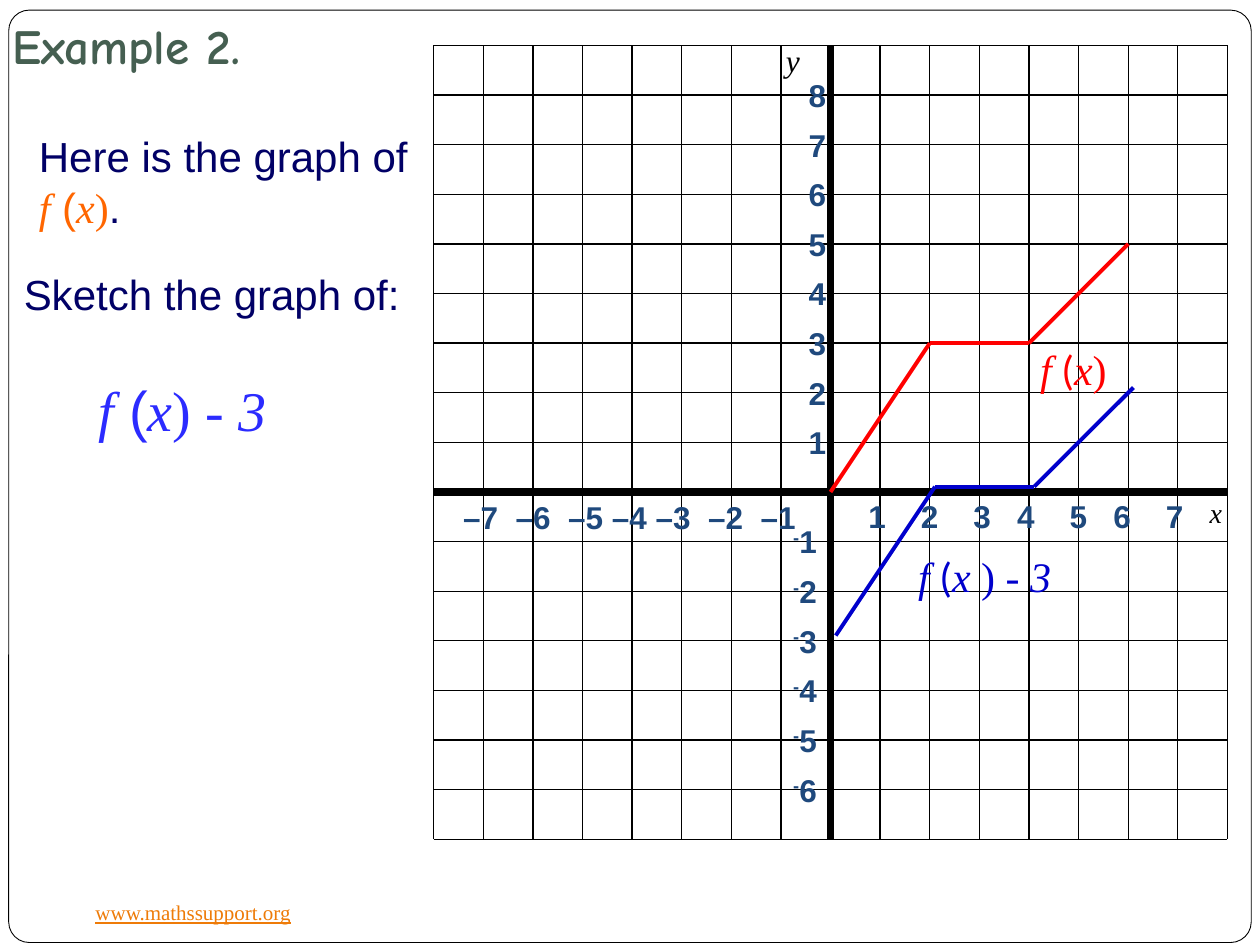
from itertools import pairwise

from lxml.etree import SubElement
from pptx import Presentation
from pptx.dml.color import RGBColor
from pptx.enum.shapes import MSO_CONNECTOR, MSO_SHAPE
from pptx.enum.text import MSO_ANCHOR, MSO_AUTO_SIZE
from pptx.oxml.ns import qn
from pptx.util import Pt

SERIF, SANS = "Times New Roman", "Arial"
BLACK, NAVY, LABEL, RED, BLUE = "000000", "010066", "1F497D", "FF0000", "0000CC"
STEP, CELLS = 28.35, 16


def rgb(value):
    """Turn a hex string into a colour."""
    return RGBColor.from_string(value)


def add_runs(p, runs, size):
    """Add (text, font, colour, italic) runs to a paragraph."""
    for text, font, color, italic in runs:
        r = p.add_run()
        r.text = text
        r.font.name = font
        r.font.size = Pt(size)
        r.font.color.rgb = rgb(color)
        r.font.italic = italic


def add_text(s, box, runs, size, wrap=True, bold=False):
    """Place a text box and return its paragraph."""
    tf = s.shapes.add_textbox(*map(Pt, box)).text_frame
    tf.word_wrap = wrap
    tf.auto_size = MSO_AUTO_SIZE.NONE if wrap else MSO_AUTO_SIZE.SHAPE_TO_FIT_TEXT
    p = tf.paragraphs[0]
    add_runs(p, runs, size)
    for r in p.runs:
        r.font.bold = bold
    return p


def add_line(s, start, end, color, width):
    """Draw a straight line without a shadow."""
    c = s.shapes.add_connector(MSO_CONNECTOR.STRAIGHT, *map(Pt, (*start, *end)))
    c.line.color.rgb = rgb(color)
    c.line.width = Pt(width)
    SubElement(c._element.spPr, qn("a:effectLst"))


def function_runs(color, paren_font, x="x", tail=""):
    """Return the runs of f (x) with an optional tail."""
    runs = [("f", SERIF, color, True), (" (", paren_font, color, False),
            (x, SERIF, color, True), (")", SERIF, color, False)]
    return runs + [(tail, SERIF, color, True)] if tail else runs


def add_frame(s, left, top, width, height):
    """Draw the rounded page border and the site address."""
    sp = s.shapes.add_shape(MSO_SHAPE.ROUNDED_RECTANGLE, *map(Pt, (left, top, width, height)))
    sp.adjustments[0] = 0.022
    sp.shadow.inherit = False
    sp.fill.solid()
    sp.fill.fore_color.rgb = rgb("FFFFFF")
    sp.line.color.rgb = rgb(BLACK)
    sp.line.width = Pt(0.5)
    site = [("www.mathssupport.org", SERIF, "EE7B08", False)]
    p = add_text(s, (left + 42.5, top + 504.7, 127.4, 21.8), site, 12, wrap=False)
    p.runs[0].font.underline = True


def add_task(s, left, top):
    """Write the title and the question."""
    title = [("Example 2.", "Comic Neue", "455F51", False)]
    p = add_text(s, (left, top, 186, 36.7), title, 28, bold=True)
    tf = s.shapes[-1].text_frame
    tf.vertical_anchor = MSO_ANCHOR.BOTTOM
    tf.margin_bottom = Pt(7.2)
    given = [("Here is the graph of ", SANS, NAVY, False),
             *function_runs("FF6600", SANS), (".", SANS, NAVY, False)]
    add_text(s, (left + 15.1, top + 58.3, 226, 65.5), given, 24)
    add_text(s, (left + 6.5, top + 136.8, 231, 36),
             [("Sketch the graph of:", SANS, NAVY, False)], 24, wrap=False)
    add_text(s, (left + 49, top + 198, 111.6, 46),
             function_runs("2B2BFF", SANS, tail=" - 3"), 32, wrap=False)


def add_tabbed_labels(s, box, labels, stops):
    """Write axis numbers centred on tab stops."""
    p = add_text(s, box, [], 18)
    tabs = SubElement(p._p.get_or_add_pPr(), qn("a:tabLst"))
    for stop in stops:
        SubElement(tabs, qn("a:tab"), pos=str(Pt(stop)), algn="ctr")
    add_runs(p, [("\t" + label, SANS, LABEL, False) for label in labels], 18)
    for r in p.runs:
        r.font.bold = True


def add_grid(s, left, top):
    """Draw the grid with its axes and numbers."""
    side = STEP * CELLS
    right, bottom = left + side, top + side
    x0, y0 = left + 8 * STEP, top + 9 * STEP
    for i in range(CELLS + 1):
        x, y = left + i * STEP, top + i * STEP
        add_line(s, (x, top), (x, bottom), BLACK, 0.75)
        add_line(s, (left, y), (right, y), BLACK, 0.75)
    add_line(s, (x0, top), (x0, bottom), BLACK, 4.5)
    add_line(s, (left, y0), (right, y0), BLACK, 4.5)
    add_text(s, (x0 - 32.6, top - 6, 38, 39.6), [("y", SERIF, BLACK, True)], 18)
    add_text(s, (right - 17.3, y0 - 1.8, 24, 23), [("x", SERIF, BLACK, True)], 16)
    add_tabbed_labels(s, (x0, y0 - 0.5, 232, 29), [str(n) for n in range(1, 8)],
                      (19.5, 49.5, 79.5, 104.5, 134.5, 159.5, 189.5))
    add_tabbed_labels(s, (x0 - 236.5, y0, 236, 29), [f"–{n}" for n in range(7, 0, -1)],
                      (29.5, 59.5, 89.5, 114.5, 139.5, 169.5, 199.5))
    for n in range(1, 9):
        add_text(s, (x0 - 19.6, y0 - 14.5 - n * STEP, 39, 29),
                 [(str(n), SANS, LABEL, False)], 18, bold=True)
    for n in range(1, 7):
        p = add_text(s, (x0 - 28.4, y0 - 14.5 + n * STEP, 41, 29),
                     [("-", SANS, LABEL, False), (str(n), SANS, LABEL, False)], 18, bold=True)
        p.runs[0].font._element.set("baseline", "30000")


def add_curve(s, x0, y0, color):
    """Draw the three-part curve from its starting point."""
    knots = [(x0 + x * STEP, y0 - y * STEP) for x, y in ((0, 0), (2, 3), (4, 3), (6, 5))]
    for start, end in pairwise(knots):
        add_line(s, start, end, color, 2.25)


def add_graph(s, left, top):
    """Draw the grid, both curves and their names."""
    x0, y0 = left + 8 * STEP, top + 9 * STEP
    add_grid(s, left, top)
    add_curve(s, x0, y0, RED)
    add_text(s, (x0 + 112.7, y0 - 88.2, 52.6, 36), function_runs(RED, "Calibri"), 24, wrap=False)
    add_curve(s, x0 + 3, y0 + 3 * STEP - 3, BLUE)
    add_text(s, (x0 + 43, y0 + 29.8, 91.4, 36),
             function_runs(BLUE, "Calibri", "x ", " - 3"), 24, wrap=False)


def main():
    """Build the slide and save it."""
    prs = Presentation()
    prs.slide_width, prs.slide_height = Pt(720), Pt(540)
    s = prs.slides.add_slide(prs.slide_layouts[6])
    add_frame(s, 5, 5.8, 710, 532.8)
    add_task(s, 0, 13)
    add_graph(s, 247.8, 26)
    prs.save("out.pptx")


if __name__ == "__main__":
    main()
